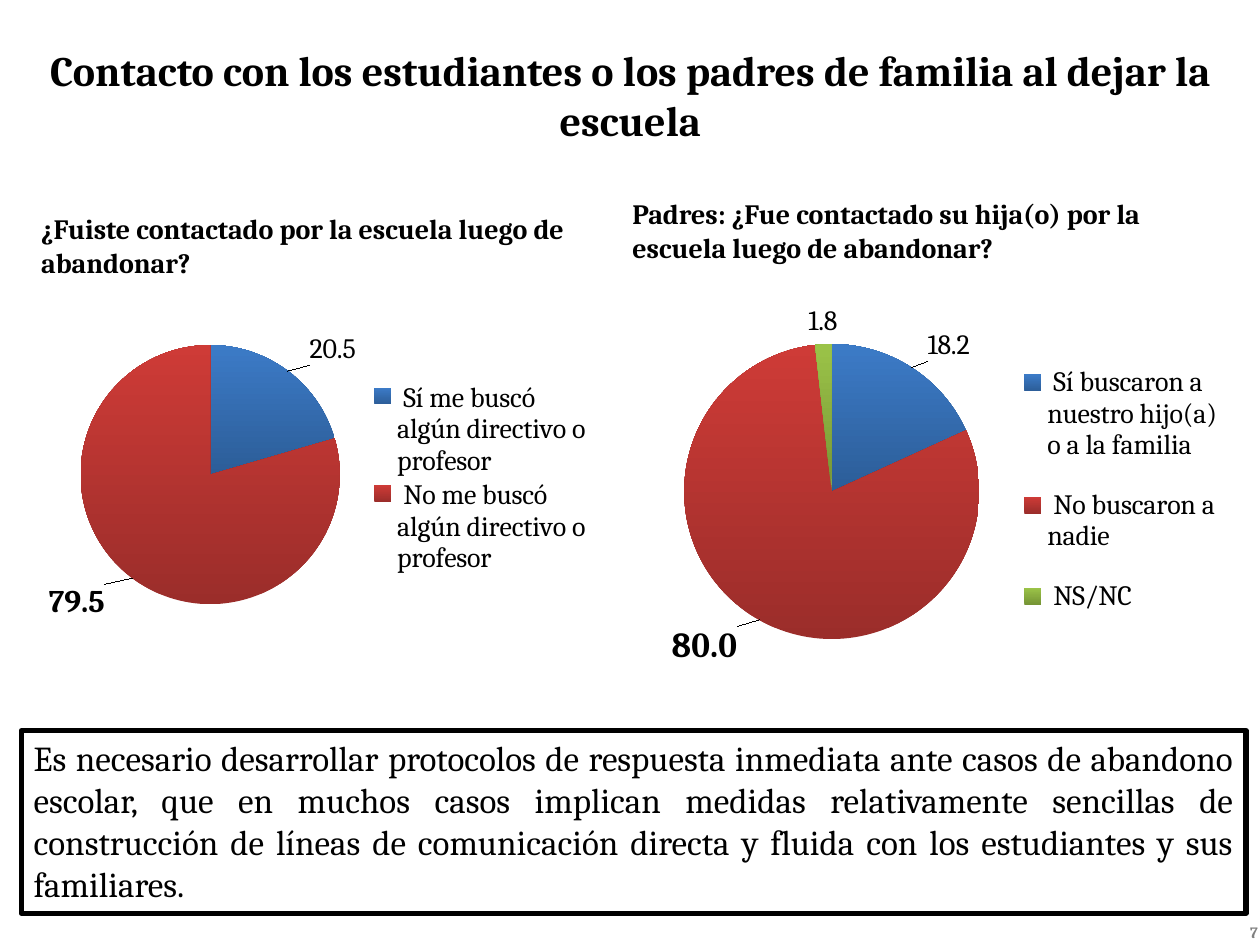
"""Build the slide on how schools contact students and parents after dropout."""
from lxml.etree import SubElement
from pptx import Presentation
from pptx.chart.data import CategoryChartData
from pptx.dml.color import RGBColor
from pptx.enum.chart import XL_CHART_TYPE as ChartType, XL_LABEL_POSITION as LabelPos
from pptx.enum.chart import XL_LEGEND_POSITION as LegendPos
from pptx.enum.shapes import MSO_SHAPE as Shape
from pptx.enum.text import MSO_ANCHOR as Anchor, PP_ALIGN as Align
from pptx.oxml.ns import qn
from pptx.util import Cm, Pt

FONT = "Cambria"
BLACK = RGBColor(0x00, 0x00, 0x00)
GRAY = RGBColor(0x80, 0x80, 0x80)
SLICE_GRADIENTS = [
    (RGBColor(0x2C, 0x5D, 0x98), RGBColor(0x3C, 0x7B, 0xC7)),
    (RGBColor(0x9B, 0x2D, 0x2A), RGBColor(0xCE, 0x3B, 0x37)),
    (RGBColor(0x76, 0x95, 0x35), RGBColor(0x9B, 0xC3, 0x48)),
]


def style_font(font, size, bold=False, color=BLACK):
    """Apply the slide's typeface with a size, weight and colour."""
    font.name = FONT
    font.size = Pt(size)
    font.bold = bold
    font.color.rgb = color


def fill_text(sp, text, size, bold=False, color=BLACK, align=Align.LEFT, anchor=Anchor.TOP):
    """Write one wrapped paragraph into a shape."""
    tf = sp.text_frame
    tf.word_wrap = True
    tf.vertical_anchor = anchor
    p = tf.paragraphs[0]
    p.alignment = align
    r = p.add_run()
    r.text = text
    style_font(r.font, size, bold, color)


def add_text(s, box, text, size, **style):
    """Add a text box at a box given in centimetres."""
    fill_text(s.shapes.add_textbox(*map(Cm, box)), text, size, **style)


def add_callout(s, box, text):
    """Add the outlined conclusion box."""
    sp = s.shapes.add_shape(Shape.RECTANGLE, *map(Cm, box))
    sp.shadow.inherit = False
    sp.fill.background()
    sp.line.color.rgb = BLACK
    sp.line.width = Pt(3)
    fill_text(sp, text, 20, align=Align.JUSTIFY)


def set_layout(parent, index, **values):
    """Give a chart part a manual layout in fractions of the chart."""
    for old in parent.findall(qn("c:layout")):
        parent.remove(old)
    layout = SubElement(parent, qn("c:layout"))
    manual = SubElement(layout, qn("c:manualLayout"))
    for tag, value in values.items():
        SubElement(manual, qn(f"c:{tag}")).set("val", str(value))
    parent.insert(index, layout)


def set_area(parent, index, area, **target):
    """Place a chart part on an area of left, top, width and height."""
    edges = dict(xMode="edge", yMode="edge")
    set_layout(parent, index, **target, **edges, **dict(zip("xywh", area)))


def add_pie(s, box, slices, plot_area, legend_area):
    """Add a pie whose slices are (name, value, label size, label shift)."""
    data = CategoryChartData(number_format="0.0")
    data.categories = [name for name, *_ in slices]
    data.add_series("Series 1", [value for _, value, *_ in slices])
    chart = s.shapes.add_chart(ChartType.PIE, *map(Cm, box), data).chart
    chart.has_title = False
    style_font(chart.font, 16)
    chart.has_legend = True
    legend = chart.legend
    legend.position = LegendPos.RIGHT
    legend.include_in_layout = False
    style_font(legend.font, 16)
    set_area(legend._element, 1, legend_area)
    set_area(chart._chartSpace.chart.plotArea, 0, plot_area, layoutTarget="inner")

    plot = chart.plots[0]
    plot.vary_by_categories = True
    series = plot.series[0]
    labels = series.data_labels
    labels.show_value = True
    labels.number_format = "0.0"
    labels.number_format_is_linked = False
    style_font(labels.font, 16)
    for i, (_, _, size, shift) in enumerate(slices):
        point = series.points[i]
        fill = point.format.fill
        fill.gradient()
        fill.gradient_angle = 90
        for stop, color in zip(fill.gradient_stops, SLICE_GRADIENTS[i]):
            stop.color.rgb = color
        label = point.data_label
        style_font(label.font, size, bold=size > 16)
        label.position = LabelPos.OUTSIDE_END
        if shift:
            dlbl = labels._element.findall(qn("c:dLbl"))[i]
            set_layout(dlbl, 1, x=shift, y=0)


def main():
    """Build and save the slide."""
    prs = Presentation()
    prs.slide_width, prs.slide_height = Cm(25.4), Cm(19.05)
    s = prs.slides.add_slide(prs.slide_layouts[6])

    add_pie(
        s, (0.58, 6.1, 11.61, 7.01),
        [(" Sí me buscó algún directivo o profesor", 20.5, 16, 0.03),
         (" No me buscó algún directivo o profesor", 79.5, 18, -0.04)],
        (0.09, 0.12, 0.45, 0.75), (0.62, 0.22, 0.37, 0.57))
    add_text(s, (0.58, 4.14, 11.61, 1.63),
             "¿Fuiste contactado por la escuela luego de abandonar?", 16, bold=True)
    add_text(s, (0.36, 0.43, 24.69, 2.95),
             "Contacto con los estudiantes o los padres de familia al dejar la escuela",
             24, bold=True, align=Align.CENTER, anchor=Anchor.MIDDLE)
    add_pie(
        s, (12.7, 5.77, 12.14, 8.2),
        [(" Sí buscaron a nuestro hijo(a) o a la familia", 18.2, 16, 0.02),
         (" No buscaron a nadie", 80.0, 20, -0.03),
         (" NS/NC", 1.8, 16, 0)],
        (0.09, 0.14, 0.49, 0.73), (0.64, 0.13, 0.35, 0.74))
    add_text(s, (12.5, 3.84, 12.6, 1.63),
             "Padres: ¿Fue contactado su hija(o) por la escuela luego de abandonar?",
             16, bold=True)
    add_callout(
        s, (0.43, 14.73, 24.69, 3.68),
        "Es necesario desarrollar protocolos de respuesta inmediata ante casos de "
        "abandono escolar, que en muchos casos implican medidas relativamente sencillas "
        "de construcción de líneas de comunicación directa y fluida con los estudiantes "
        "y sus familiares.")
    add_text(s, (19.69, 18.52, 5.92, 0.56), "7", 9, bold=True, color=GRAY,
             align=Align.RIGHT, anchor=Anchor.MIDDLE)
    prs.save("out.pptx")


if __name__ == "__main__":
    main()
